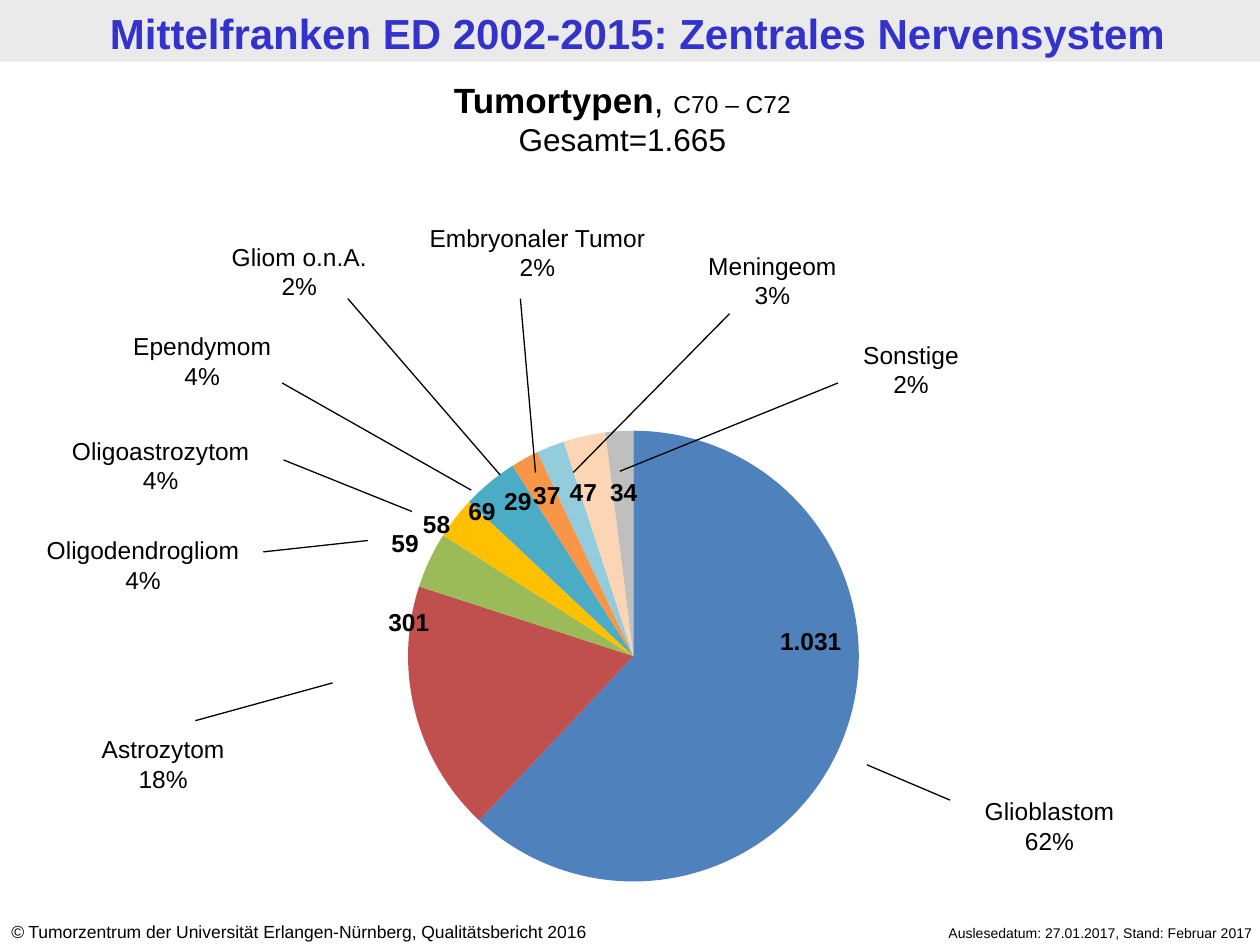
from dataclasses import dataclass

from pptx import Presentation
from pptx.chart.data import CategoryChartData
from pptx.dml.color import RGBColor
from pptx.enum import chart as ch, shapes, text
from pptx.oxml import parse_xml
from pptx.oxml.ns import nsdecls
from pptx.util import Inches, Pt

BLACK = RGBColor(0x00, 0x00, 0x00)
BAND_GREY = RGBColor(0xEA, 0xEA, 0xEA)
TITLE_BLUE = RGBColor(0x33, 0x33, 0xCC)
BLUE = RGBColor(0x4F, 0x81, 0xBD)
RED = RGBColor(0xC0, 0x50, 0x4D)
GREEN = RGBColor(0x9B, 0xBB, 0x59)
YELLOW = RGBColor(0xFF, 0xC0, 0x00)
TEAL = RGBColor(0x4B, 0xAC, 0xC6)
ORANGE = RGBColor(0xF7, 0x96, 0x46)
LIGHT_BLUE = RGBColor(0x93, 0xCD, 0xDD)
PEACH = RGBColor(0xFC, 0xD5, 0xB5)
GREY = RGBColor(0xBF, 0xBF, 0xBF)

LEFT, CENTER, RIGHT = (text.PP_ALIGN.LEFT, text.PP_ALIGN.CENTER,
                       text.PP_ALIGN.RIGHT)
LABEL_HEIGHT, COUNT_HEIGHT = 0.57, 0.34


@dataclass(frozen=True)
class TumorType:
    name: str
    percent: str
    value: int
    color: RGBColor
    label_box: tuple[float, float, float]  # left, top, width
    count: str
    count_box: tuple[float, float, float]  # left, top, width
    leader: tuple[float, float, float, float]  # from x, y to x, y


TUMOR_TYPES = [
    TumorType("Glioblastom", "62%", 62, BLUE, (7.28, 6.27, 2.1),
              "1.031", (6.02, 4.92, 0.83), (6.88, 6.07, 7.54, 6.35)),
    TumorType("Astrozytom", "18%", 18, RED, (0.12, 5.78, 2.35),
              "301", (2.83, 4.77, 0.83), (2.64, 5.42, 1.55, 5.72)),
    TumorType("Oligodendrogliom", "4%", 4, GREEN, (0.16, 4.2, 1.95),
              "59", (2.8, 4.14, 0.83), (2.92, 4.29, 2.09, 4.38)),
    TumorType("Oligoastrozytom", "4%", 3, YELLOW, (0.3, 3.41, 1.95),
              "58", (3.19, 3.99, 0.55), (3.27, 4.06, 2.25, 3.65)),
    TumorType("Ependymom", "4%", 4, TEAL, (0.63, 2.58, 1.95),
              "69", (3.58, 3.89, 0.49), (3.74, 3.89, 2.24, 3.04)),
    TumorType("Gliom o.n.A.", "2%", 2, ORANGE, (0.93, 1.87, 2.89),
              "29", (3.85, 3.81, 0.52), (3.97, 3.77, 2.76, 2.37)),
    TumorType("Embryonaler Tumor", "2%", 2, LIGHT_BLUE, (3.29, 1.72, 1.95),
              "37", (4.13, 3.76, 0.42), (4.25, 3.75, 4.13, 2.37)),
    TumorType("Meningeom", "3%", 3, PEACH, (4.92, 1.94, 2.42),
              "47", (4.42, 3.74, 0.42), (4.55, 3.75, 5.79, 2.49)),
    TumorType("Sonstige", "2%", 2, GREY, (6.39, 2.65, 1.68),
              "34", (4.74, 3.74, 0.42), (4.92, 3.74, 6.65, 3.04)),
]


def add_text(slide, box: tuple[float, ...], lines: list[str], size: float,
             align=CENTER, bold: bool = False, color: RGBColor = BLACK,
             wrap: bool = True):
    """Add a text box with one paragraph a line and return its paragraphs."""
    frame = slide.shapes.add_textbox(*map(Inches, box)).text_frame
    frame.word_wrap = wrap
    frame.text = "\n".join(lines)
    for paragraph in frame.paragraphs:
        paragraph.alignment = align
        font = paragraph.font
        font.name, font.size, font.bold = "Arial", Pt(size), bold
        font.color.rgb = color
    return frame.paragraphs


def add_leader(slide, ends: tuple[float, float, float, float]) -> None:
    line = slide.shapes.add_connector(shapes.MSO_CONNECTOR.STRAIGHT,
                                      *map(Inches, ends))
    line.line.color.rgb = BLACK
    line.line.width = Pt(0.75)
    line._element.spPr.append(parse_xml(f"<a:effectLst {nsdecls('a')}/>"))


def add_pie(slide, tumors: list[TumorType]) -> None:
    data = CategoryChartData()
    data.categories = [str(n) for n in range(1, len(tumors) + 1)]
    data.add_series("Series 1", [tumor.value for tumor in tumors])
    pie = slide.shapes.add_chart(
        ch.XL_CHART_TYPE.PIE, Inches(2.4), Inches(3.28),
        Inches(5.24), Inches(3.86), data).chart
    pie.has_legend = False
    pie.has_title = False
    pie.font.name, pie.font.size = "Calibri", Pt(18)
    pie.font.color.rgb = BLACK
    plot = pie.plots[0]
    plot.vary_by_categories = True
    for index, tumor in enumerate(tumors):
        fill = plot.series[0].points[index].format.fill
        fill.solid()
        fill.fore_color.rgb = tumor.color

    # Fixed plot area, so that the slices meet their labels
    plot_area = pie._chartSpace.chart.plotArea
    for layout in plot_area.findall("{*}layout"):
        plot_area.remove(layout)
    plot_area.insert(0, parse_xml(
        f"<c:layout {nsdecls('c')}><c:manualLayout>"
        '<c:layoutTarget val="inner"/>'
        '<c:xMode val="edge"/><c:yMode val="edge"/>'
        '<c:x val="0.16"/><c:y val="0.036"/>'
        '<c:w val="0.683"/><c:h val="0.927"/>'
        "</c:manualLayout></c:layout>"))


def main() -> None:
    prs = Presentation()
    prs.slide_width, prs.slide_height = Inches(10), Inches(7.5)
    slide = prs.slides.add_slide(prs.slide_layouts[6])

    # Title band
    band = slide.shapes.add_shape(shapes.MSO_SHAPE.RECTANGLE, 0, 0,
                                  Inches(10), Inches(0.49))
    band.shadow.inherit = False
    band.fill.solid()
    band.fill.fore_color.rgb = BAND_GREY
    band.line.fill.background()
    add_text(slide, (0.06, 0.01, 10, 0.49),
             ["Mittelfranken ED 2002-2015: Zentrales Nervensystem"],
             24, bold=True, color=TITLE_BLUE)

    # Footer
    source = add_text(slide, (-0.01, 7.26, 5.24, 0.27), ["©"], 10, LEFT)[0]
    source.runs[0].font.italic = True
    source.add_run().text = (" Tumorzentrum der Universität Erlangen-Nürnberg,"
                             " Qualitätsbericht 2016")
    add_text(slide, (6.65, 7.29, 3.39, 0.24),
             ["Auslesedatum: 27.01.2017, Stand: Februar 2017"], 8, RIGHT)

    # Chart heading
    heading, total = add_text(slide, (0, 0.57, 9.88, 0.74),
                              ["Tumortypen", "Gesamt=1.665"], 20)
    heading.runs[0].font.bold = True
    heading.add_run().text = ", "
    codes = heading.add_run()
    codes.text = "C70 – C72"
    codes.font.size = Pt(14)
    total.font.size = Pt(18)

    # Pie with counts, leader lines and labels
    add_pie(slide, TUMOR_TYPES)
    for tumor in TUMOR_TYPES:
        add_text(slide, (*tumor.count_box, COUNT_HEIGHT), [tumor.count], 14,
                 bold=True, wrap=False)
        add_leader(slide, tumor.leader)
        add_text(slide, (*tumor.label_box, LABEL_HEIGHT),
                 [tumor.name, tumor.percent], 14)

    prs.save("out.pptx")


if __name__ == "__main__":
    main()
